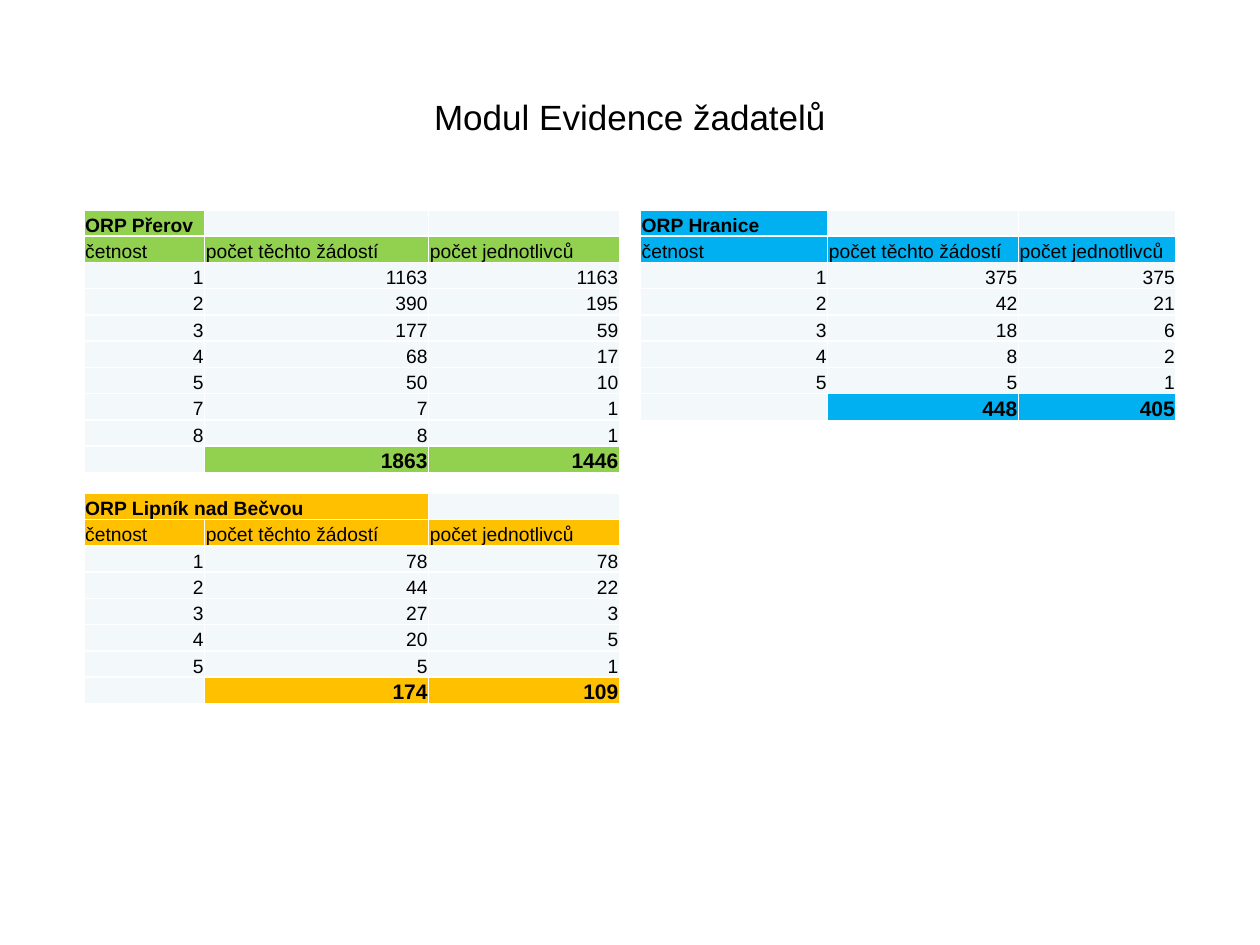
from lxml.etree import SubElement
from pptx import Presentation
from pptx.dml.color import RGBColor
from pptx.enum.text import MSO_ANCHOR, PP_ALIGN
from pptx.oxml import parse_xml
from pptx.oxml.ns import nsdecls
from pptx.util import Pt

BLACK = RGBColor(0x00, 0x00, 0x00)
PALE = RGBColor(0xF3, 0xF9, 0xFA)
GREEN = RGBColor(0x92, 0xD0, 0x50)
AMBER = RGBColor(0xFF, 0xC0, 0x00)
BLUE = RGBColor(0x00, 0xB0, 0xF0)

HEADERS = ("četnost", "počet těchto žádostí", "počet jednotlivců")
PREROV = [(1, 1163, 1163), (2, 390, 195), (3, 177, 59), (4, 68, 17),
          (5, 50, 10), (7, 7, 1), (8, 8, 1)]
LIPNIK = [(1, 78, 78), (2, 44, 22), (3, 27, 3), (4, 20, 5), (5, 5, 1)]
HRANICE = [(1, 375, 375), (2, 42, 21), (3, 18, 6), (4, 8, 2), (5, 5, 1)]


class Deck:
    font = "Arial"
    title_size = 20
    text_size = 11
    total_size = 12
    row_height = 15
    inset = 0.7

    def __init__(self, width, height):
        self.prs = Presentation()
        self.prs.slide_width, self.prs.slide_height = Pt(width), Pt(height)
        self.s = self.prs.slides.add_slide(self.prs.slide_layouts[5])

    def style(self, p, size, bold=False):
        for r in p.runs:
            r.font.name, r.font.size, r.font.bold = self.font, Pt(size), bold
            r.font.color.rgb = BLACK

    def title(self, text, left, top, width, height):
        sp = self.s.shapes.title
        sp.left, sp.top, sp.width, sp.height = map(Pt, (left, top, width, height))
        tf = sp.text_frame
        tf.text = text
        tf.vertical_anchor = MSO_ANCHOR.MIDDLE
        tf.paragraphs[0].alignment = PP_ALIGN.CENTER
        self.style(tf.paragraphs[0], self.title_size)

    def borders(self, cell):
        tc_pr = cell._tc.get_or_add_tcPr()
        for i, side in enumerate("LRTB"):
            tc_pr.insert(i, parse_xml(
                f'<a:ln{side} {nsdecls("a")} w="12700"><a:solidFill>'
                f'<a:srgbClr val="FFFFFF"/></a:solidFill></a:ln{side}>'))

    def cell(self, cell, value, fill, size, bold):
        cell.margin_left = cell.margin_right = cell.margin_top = Pt(self.inset)
        cell.margin_bottom = 0
        cell.vertical_anchor = MSO_ANCHOR.BOTTOM
        cell.fill.solid()
        cell.fill.fore_color.rgb = fill
        self.borders(cell)
        p = cell.text_frame.paragraphs[0]
        if value == "":
            # Small end mark keeps an empty row from growing
            SubElement(p._p, f"{{{p._p.nsmap['a']}}}endParaRPr", sz=str(size * 100))
            return
        p.text = str(value)
        p.alignment = PP_ALIGN.RIGHT if isinstance(value, int) else PP_ALIGN.LEFT
        self.style(p, size, bold)

    def region_table(self, name, data, color, left, top, widths, name_span=1):
        totals = ("", *(sum(column) for column in list(zip(*data))[1:]))
        rows = [(name, "", ""), HEADERS, *data, totals]
        last = len(rows) - 1
        table = self.s.shapes.add_table(
            len(rows), len(widths), Pt(left), Pt(top),
            Pt(sum(widths)), Pt(self.row_height * len(rows))).table
        table.first_row = table.horz_banding = False
        for column, width in zip(table.columns, widths):
            column.width = Pt(width)
        for i, row in enumerate(rows):
            size = self.total_size if i == last else self.text_size
            for j, value in enumerate(row):
                colored = (i == 1 or (i == 0 and j < name_span)
                           or (i == last and j > 0))
                self.cell(table.cell(i, j), value, color if colored else PALE,
                          size, i in (0, last))
        if name_span > 1:
            table.cell(0, 0).merge(table.cell(0, name_span - 1))


def main():
    deck = Deck(720, 540)
    deck.title("Modul Evidence žadatelů", 36, 21.6, 648, 90)

    # Left column
    left_widths = (69, 128, 109)
    deck.region_table("ORP Přerov", PREROV, GREEN, 48, 120, left_widths)
    deck.region_table("ORP Lipník nad Bečvou", LIPNIK, AMBER, 48, 282,
                      left_widths, name_span=2)

    # Right column
    deck.region_table("ORP Hranice", HRANICE, BLUE, 366, 120, (107, 109, 90))

    deck.prs.save("out.pptx")


if __name__ == "__main__":
    main()
